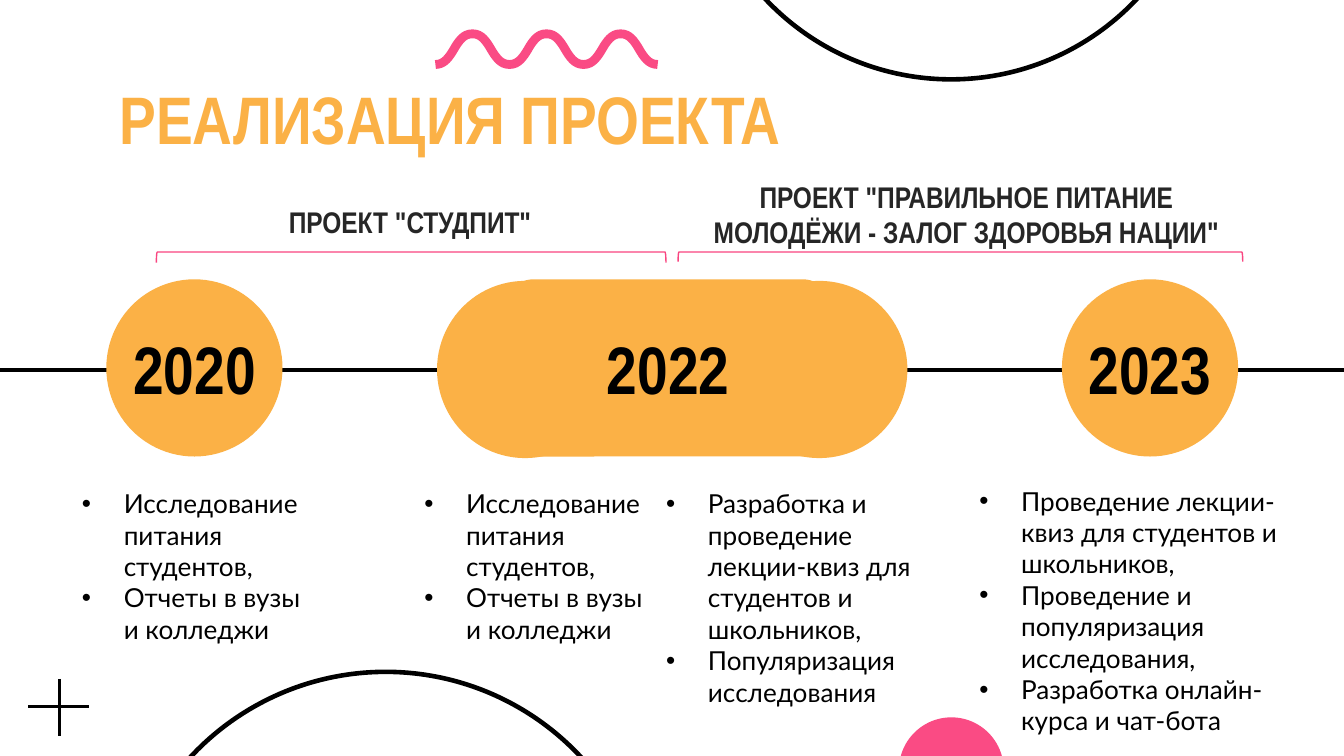
from dataclasses import dataclass

import lxml.etree
import pptx
import pptx.dml.color
import pptx.enum.shapes
import pptx.enum.text
import pptx.oxml.ns
import pptx.util

Cm, Pt = pptx.util.Cm, pptx.util.Pt
SHAPE = pptx.enum.shapes.MSO_SHAPE
ALIGN = pptx.enum.text.PP_ALIGN
ANCHOR = pptx.enum.text.MSO_ANCHOR
qn = pptx.oxml.ns.qn

COLORS = {
    "black": "000000",
    "label": "262626",
    "orange": "FBB146",
    "pink": "FA4B84",
    "bracket": "F94580",
}
HEADING_FONT, BODY_FONT = "Arial Narrow", "Lato"
TIMELINE_Y = 6.99


@dataclass
class Box:
    """Position and size in centimetres."""
    left: float
    top: float
    width: float
    height: float

    def lengths(self) -> tuple:
        return Cm(self.left), Cm(self.top), Cm(self.width), Cm(self.height)


@dataclass
class Milestone:
    box: Box
    year: str = ""
    preset: SHAPE = SHAPE.OVAL


@dataclass
class Notes:
    box: Box
    items: list[str]


@dataclass
class Project:
    name: str
    label: Box
    bracket: Box
    align: ALIGN


STUDY = ["Исследование питания студентов,", "Отчеты в вузы и колледжи"]
MILESTONES = [
    Milestone(Box(2.01, 5.28, 3.33, 3.35), "2020"),
    Milestone(Box(8.26, 5.31, 3.33, 3.35)),
    Milestone(Box(13.82, 5.31, 3.33, 3.35)),
    Milestone(Box(20.07, 5.28, 3.33, 3.35), "2023"),
    Milestone(Box(9.53, 5.28, 6.2, 3.35), "2022", SHAPE.ROUNDED_RECTANGLE),
]
NOTES = [
    Notes(Box(1.3, 8.97, 4.75, 4.29), STUDY),
    Notes(Box(7.77, 8.97, 4.75, 4.52), STUDY),
    Notes(Box(12.34, 8.97, 5.16, 4.67), [
        "Разработка и проведение лекции-квиз для студентов и школьников,",
        "Популяризация исследования",
    ]),
    Notes(Box(18.26, 8.92, 6.45, 5.26), [
        "Проведение лекции-квиз для студентов и школьников,",
        "Проведение и популяризация исследования,",
        "Разработка онлайн-курса и чат-бота",
    ]),
]
PROJECTS = [
    Project('ПРОЕКТ "СТУДПИТ"', Box(5.21, 3.61, 5.74, 1.02),
            Box(7.67, 0.05, 0.2, 9.63), ALIGN.LEFT),
    Project('ПРОЕКТ "ПРАВИЛЬНОЕ ПИТАНИЕ МОЛОДЁЖИ - ЗАЛОГ ЗДОРОВЬЯ НАЦИИ"',
            Box(12.93, 3.12, 10.67, 1.52), Box(18.06, -0.48, 0.18, 10.67),
            ALIGN.CENTER),
]


def rgb(color: str) -> pptx.dml.color.RGBColor:
    return pptx.dml.color.RGBColor.from_string(COLORS[color])


def paint(shape, fill: str = "", line: str = "", weight: float = 0) -> None:
    """Set fill and outline; an empty colour name means none."""
    shape.shadow.inherit = False
    if fill:
        shape.fill.solid()
        shape.fill.fore_color.rgb = rgb(fill)
    else:
        shape.fill.background()
    if line:
        shape.line.color.rgb = rgb(line)
        shape.line.width = Pt(weight)
    else:
        shape.line.fill.background()


def add_preset(slide, preset: SHAPE, box: Box, fill: str = "", line: str = "",
               weight: float = 0):
    shape = slide.shapes.add_shape(preset, *box.lengths())
    paint(shape, fill, line, weight)
    return shape


def add_line(slide, x1: float, y1: float, x2: float, y2: float,
             weight: float) -> None:
    line = slide.shapes.add_connector(
        pptx.enum.shapes.MSO_CONNECTOR.STRAIGHT, Cm(x1), Cm(y1), Cm(x2), Cm(y2))
    line.line.color.rgb = rgb("black")
    line.line.width = Pt(weight)
    properties = line._element.find(qn("p:spPr"))
    lxml.etree.SubElement(properties, qn("a:effectLst"))


def write(shape, paragraphs: list[str], size: float, color: str,
          font: str = HEADING_FONT, align: ALIGN = ALIGN.LEFT,
          anchor: ANCHOR = ANCHOR.TOP, wrap: bool = True) -> None:
    frame = shape.text_frame
    frame.auto_size = pptx.enum.text.MSO_AUTO_SIZE.NONE
    frame.word_wrap = wrap
    frame.vertical_anchor = anchor
    frame.margin_left = frame.margin_right = Cm(0.25)
    frame.margin_top = frame.margin_bottom = Cm(0.25)
    frame.text = "\n".join(paragraphs)
    for paragraph in frame.paragraphs:
        paragraph.alignment = align
        paragraph.font.size = Pt(size)
        paragraph.font.name = font
        paragraph.font.bold = font == HEADING_FONT
        paragraph.font.color.rgb = rgb(color)


def add_wave(slide, left: float, low: float, high: float, half: float,
             count: int, steps: int = 16) -> None:
    """Draw smooth half-waves, alternately rising and falling."""
    points = [(left, low)]
    for index in range(count):
        start, end = (low, high) if index % 2 == 0 else (high, low)
        for step in range(1, steps + 1):
            t = step / steps
            x = left + half * (index + 1.5 * t * (1 - t) + t ** 3)
            y = start + (end - start) * (3 * t ** 2 - 2 * t ** 3)
            points.append((x, y))
    emu = [(Cm(x), Cm(y)) for x, y in points]
    builder = slide.shapes.build_freeform(*emu[0])
    builder.add_line_segments(emu[1:], close=False)
    paint(builder.convert_to_shape(), line="pink", weight=4.73)


def add_milestone(slide, milestone: Milestone) -> None:
    shape = add_preset(slide, milestone.preset, milestone.box, "orange")
    if milestone.year:
        write(shape, [milestone.year], 36, "black", align=ALIGN.CENTER,
              anchor=ANCHOR.MIDDLE, wrap=False)


def add_notes(slide, notes: Notes) -> None:
    text = slide.shapes.add_textbox(*notes.box.lengths())
    write(text, notes.items, 14, "black", BODY_FONT)
    for paragraph in text.text_frame.paragraphs:
        properties = paragraph._p.get_or_add_pPr()
        properties.set("marL", str(Cm(0.79)))
        properties.set("indent", str(-Cm(0.79)))
        bullet_font = lxml.etree.Element(qn("a:buFont"), typeface="Arial")
        bullet = lxml.etree.Element(qn("a:buChar"), char="•")
        properties.insert(0, bullet_font)
        properties.insert(1, bullet)


def add_project(slide, project: Project) -> None:
    bracket = add_preset(slide, SHAPE.LEFT_BRACKET, project.bracket,
                         line="bracket", weight=0.75)
    bracket.rotation = 90
    label = slide.shapes.add_textbox(*project.label.lengths())
    write(label, [project.name], 16, "label", align=project.align)


def main() -> None:
    deck = pptx.Presentation()
    deck.slide_width, deck.slide_height = Cm(25.4), Cm(14.29)
    slide = deck.slides.add_slide(deck.slide_layouts[5])

    title = slide.shapes.title
    title.left, title.top, title.width, title.height = Box(
        2.01, 1.22, 21.41, 1.98).lengths()
    write(title, ["РЕАЛИЗАЦИЯ ПРОЕКТА"], 36, "orange")

    for ring in (Box(2.26, 12.7, 10.06, 10.06), Box(13.16, -8.13, 9.63, 9.63)):
        add_preset(slide, SHAPE.OVAL, ring, line="black", weight=2.46)
    add_wave(slide, left=8.23, low=1.22, high=0.64, half=0.7, count=6)
    add_line(slide, -0.48, TIMELINE_Y, 26.11, TIMELINE_Y, 2.25)

    for milestone in MILESTONES:
        add_milestone(slide, milestone)
    for notes in NOTES:
        add_notes(slide, notes)
    for project in PROJECTS:
        add_project(slide, project)

    add_preset(slide, SHAPE.OVAL, Box(16.99, 13.56, 1.98, 1.98), "pink")
    add_line(slide, 1.12, 12.83, 1.12, 13.92, 1.5)
    add_line(slide, 0.53, 13.36, 1.68, 13.36, 1.5)
    deck.save("out.pptx")


if __name__ == "__main__":
    main()
